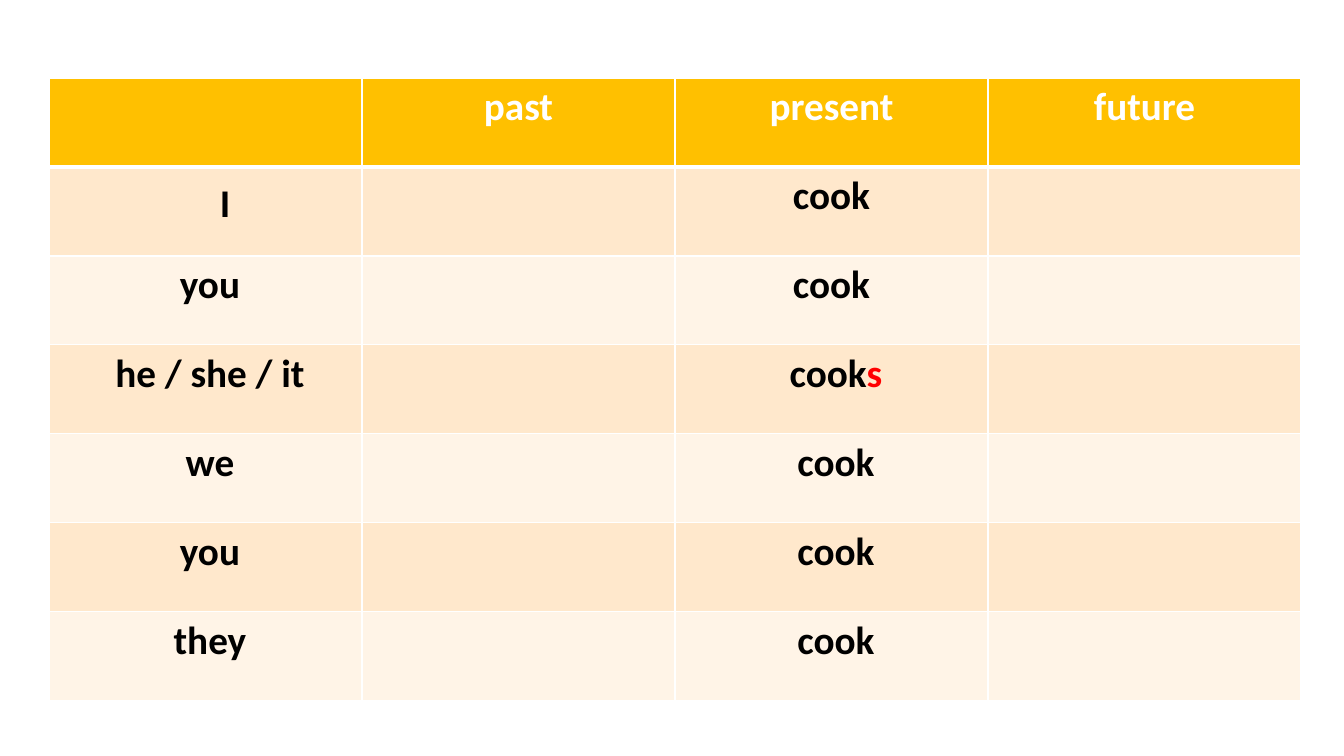
from dataclasses import dataclass

from lxml import etree
from pptx import Presentation
from pptx.dml.color import RGBColor
from pptx.enum.text import PP_ALIGN
from pptx.oxml.ns import qn
from pptx.table import _Cell
from pptx.util import Emu, Pt

CENTER = PP_ALIGN.CENTER
WHITE = RGBColor(0xFF, 0xFF, 0xFF)
BLACK = RGBColor(0x00, 0x00, 0x00)
RED = RGBColor(0xFF, 0x00, 0x00)
GOLD = RGBColor(0xFF, 0xC0, 0x00)
PEACH = RGBColor(0xFF, 0xE8, 0xCC)
CREAM = RGBColor(0xFF, 0xF4, 0xE7)

SCALE = 914400 / 100.8
LEFT, TOP = 49, 78
COL, ROW = 313, 89
THIN, THICK = 1, 3


@dataclass(frozen=True)
class Form:
    person: str
    verb: str
    ending: str = ""


HEADS = ("", "past", "present", "future")
FORMS = (
    Form("　I", "cook"),
    Form(" you", "cook"),
    Form(" he / she / it", " cook", "s"),
    Form(" we", " cook"),
    Form(" you", " cook"),
    Form(" they", " cook"),
)


def px(length: int) -> Emu:
    return Emu(round(length * SCALE))


def write(cell: _Cell, text: str, *, color: RGBColor = BLACK,
          size: int = 28, bold: bool = True) -> None:
    """Add a centred run to the cell."""
    if not text:
        return
    para = cell.text_frame.paragraphs[0]
    para.alignment = CENTER
    run = para.add_run()
    run.text = text
    font = run.font
    font.name, font.size, font.bold = "Calibri", Pt(size), bold
    font.color.rgb = color


def paint(cell: _Cell, fill: RGBColor, top: int = THIN, base: int = THIN) -> None:
    """Fill the cell and rule its four sides in white."""
    cell.fill.solid()
    cell.fill.fore_color.rgb = fill
    props = cell._tc.get_or_add_tcPr()
    sides = (("L", THIN), ("R", THIN), ("T", top), ("B", base))
    for place, (side, width) in enumerate(sides):
        line = etree.Element(qn(f"a:ln{side}"), w=str(Pt(width)))
        solid = etree.SubElement(line, qn("a:solidFill"))
        etree.SubElement(solid, qn("a:srgbClr"), val=str(WHITE))
        props.insert(place, line)


def main() -> None:
    deck = Presentation()
    deck.slide_width, deck.slide_height = px(1344), px(756)
    slide = deck.slides.add_slide(deck.slide_layouts[6])

    # Table grid
    rows, cols = len(FORMS) + 1, len(HEADS)
    table = slide.shapes.add_table(
        rows, cols, px(LEFT), px(TOP), px(cols * COL), px(rows * ROW)).table
    for col in table.columns:
        col.width = px(COL)
    for row in table.rows:
        row.height = px(ROW)

    # Tense headings
    for col, head in enumerate(HEADS):
        cell = table.cell(0, col)
        paint(cell, GOLD, base=THICK)
        write(cell, head, color=WHITE)

    # Verb forms by person
    for row, form in enumerate(FORMS, 1):
        for col in range(cols):
            paint(table.cell(row, col), PEACH if row % 2 else CREAM,
                  top=THICK if row == 1 else THIN)
        write(table.cell(row, 0), form.person)
        verb = table.cell(row, HEADS.index("present"))
        write(verb, form.verb)
        write(verb, form.ending, color=RED)

    deck.save("out.pptx")


if __name__ == "__main__":
    main()
